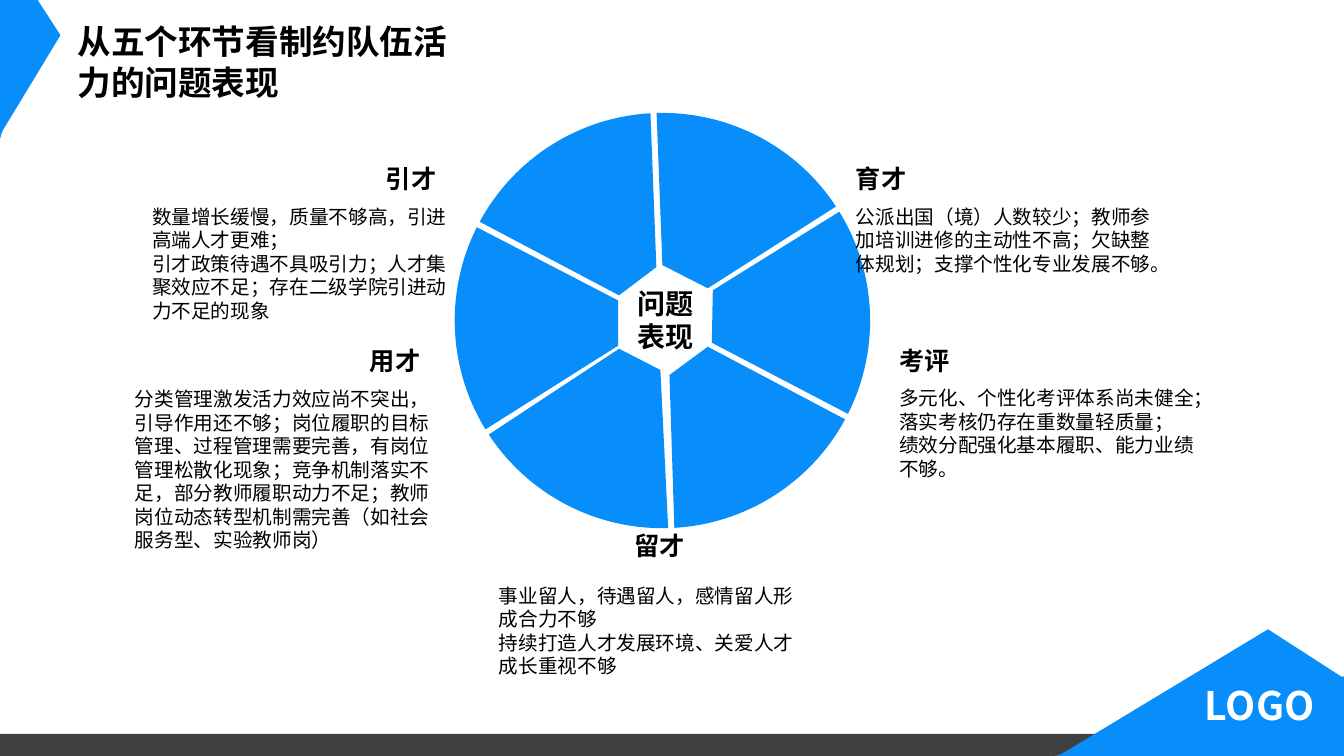
import math
from pptx import Presentation
from pptx import util as u
from pptx.dml.color import RGBColor
from pptx.enum import shapes, text
from pptx.oxml.ns import qn
from lxml import etree

BLUE = RGBColor(0x08, 0x8E, 0xFB)
GREY = RGBColor(0x40, 0x40, 0x40)
BLACK = RGBColor(0, 0, 0)
WHITE = RGBColor(255, 255, 255)
FONT = "Noto Sans CJK SC"

HEADING = {"size": u.Pt(18), "bold": True}
BODY = {"size": u.Pt(14), "bold": False}
TITLE = {"size": u.Pt(24), "bold": True}
HUB = {"size": u.Pt(20), "bold": True}
LOGO = {"size": u.Pt(28), "bold": True}

# Topic: heading position, body position, body height, heading, paragraphs
TOPICS = [
    ((8.39, 1.57), (8.39, 1.98), 0.81, "育才",
     ["公派出国（境）人数较少；教师参加培训进修的主动性不高；欠缺整体规划；支撑个性化专业发展不够。"]),
    ((8.82, 3.38), (8.82, 3.78), 1.04, "考评",
     ["多元化、个性化考评体系尚未健全；",
      "落实考核仍存在重数量轻质量；",
      "绩效分配强化基本履职、能力业绩不够。"]),
    ((3.73, 1.57), (1.41, 1.98), 1.28, "引才",
     ["数量增长缓慢，质量不够高，引进高端人才更难；",
      "引才政策待遇不具吸引力；人才集聚效应不足；存在二级学院引进动力不足的现象"]),
    ((3.57, 3.38), (1.24, 3.79), 1.75, "用才",
     ["分类管理激发活力效应尚不突出，引导作用还不够；岗位履职的目标管理、过程管理需要完善，"
      "有岗位管理松散化现象；竞争机制落实不足，部分教师履职动力不足；"
      "教师岗位动态转型机制需完善（如社会服务型、实验教师岗）"]),
    ((6.19, 5.21), (4.85, 5.74), 1.51, "留才",
     ["事业留人，待遇留人，感情留人形成合力不够",
      "持续打造人才发展环境、关爱人才成长重视不够"]),
]

# Inner corners of each wheel sector, relative to the hub, clockwise from lower right
HUB_CORNERS = [
    [(0.07, 0.54), (0.45, 0.26)],
    [(-0.43, 0.28), (-0.02, 0.49)],
    [(-0.44, -0.2), (-0.44, 0.25)],
    [(-0.06, -0.53), (-0.43, -0.25)],
    [(0.45, -0.32), (0, -0.55)],
    [(0.49, 0.22), (0.5, -0.3)],
]


def paint(sp, color):
    sp.shadow.inherit = False
    sp.fill.solid()
    sp.fill.fore_color.rgb = color
    sp.line.fill.background()


def add_text(s, box, paragraphs, style, color=BLACK):
    tf = s.shapes.add_textbox(*map(u.Inches, box)).text_frame
    tf.word_wrap = True
    tf.auto_size = text.MSO_AUTO_SIZE.SHAPE_TO_FIT_TEXT
    for i, line in enumerate(paragraphs):
        p = tf.paragraphs[0] if i == 0 else tf.add_paragraph()
        r = p.add_run()
        r.text = line
        for name, value in style.items():
            setattr(r.font, name, value)
        r.font.name = FONT
        r.font.color.rgb = color
        ea = etree.SubElement(r.font._element, qn("a:ea"))
        ea.set("typeface", FONT)


def add_triangle(s, box, apex, rotation=0, flip=False):
    sp = s.shapes.add_shape(shapes.MSO_SHAPE.ISOSCELES_TRIANGLE, *map(u.Inches, box))
    sp.adjustments[0] = apex
    sp.rotation = rotation
    if flip:
        sp._element.spPr.xfrm.set("flipH", "1")
    paint(sp, BLUE)


def add_frame(s, width, height):
    """Footer bar and the two folded corners."""
    bar = s.shapes.add_shape(shapes.MSO_SHAPE.RECTANGLE, u.Inches(-0.02),
                             u.Inches(height - 0.22), u.Inches(11.08), u.Inches(0.22))
    paint(bar, GREY)
    add_triangle(s, (width - 2.87, height - 0.79, 2.87, 0.79), 0, flip=True)
    add_triangle(s, (width - 3, height - 1.04, 2.98, 0.68), 0.206, 344.9, flip=True)
    add_triangle(s, (-0.5, 0.5, 1.38, 0.38), 0, 90)
    add_triangle(s, (-0.39, 0.55, 1.44, 0.33), 0.206, 105.1)
    add_text(s, (width - 1.48, height - 0.79, 1.41, 0.57), ["LOGO"], LOGO, WHITE)


def sector_steps(radius, start, sweep, corners):
    """Path commands of one sector, relative to the hub."""
    a, b = math.radians(start), math.radians(start + sweep)
    pull = 4 / 3 * math.tan((b - a) / 4)
    (ax, ay), (bx, by) = [(radius * math.cos(t), radius * math.sin(t)) for t in (a, b)]
    bend = [(ax - pull * ay, ay + pull * ax), (bx + pull * by, by - pull * bx), (bx, by)]
    lines = [("a:lnTo", [corner]) for corner in corners]
    return [("a:moveTo", [(ax, ay)]), ("a:cubicBezTo", bend), *lines, ("a:close", [])]


def add_wheel(s, cx, cy, radius, start=28.4, sweep=58.3):
    """Six curved sectors, 60 degrees apart, around a hexagonal hub."""
    left, top, side = (u.Inches(v) for v in (cx - radius, cy - radius, 2 * radius))
    builder = s.shapes.build_freeform(left, top)
    builder.add_line_segments([(left + side, top), (left + side, top + side), (left, top + side)])
    wheel = builder.convert_to_shape()
    outline = next(wheel._element.iter(qn("a:path")))
    for child in list(outline):
        outline.remove(child)
    for k, corners in enumerate(HUB_CORNERS):
        for tag, points in sector_steps(radius, start + 60 * k, sweep, corners):
            step = etree.SubElement(outline, qn(tag))
            for x, y in points:
                pt = etree.SubElement(step, qn("a:pt"))
                pt.set("x", str(int(u.Inches(x + radius))))
                pt.set("y", str(int(u.Inches(y + radius))))
    paint(wheel, BLUE)
    add_text(s, (cx - 0.35, cy - 0.39, 0.95, 0.77), ["问题表现"], HUB)


def add_topic(s, heading_at, body_at, body_height, heading, paragraphs):
    add_text(s, (*body_at, 3.13, body_height), paragraphs, BODY)
    add_text(s, (*heading_at, 0.97, 0.4), [heading], HEADING)


def main():
    width, height = 13.33, 7.5
    prs = Presentation()
    prs.slide_width, prs.slide_height = u.Inches(width), u.Inches(height)
    s = prs.slides.add_slide(prs.slide_layouts[6])
    add_frame(s, width, height)
    add_text(s, (0.67, 0.16, 4.11, 0.91), ["从五个环节看制约队伍活力的问题表现"], TITLE)
    add_wheel(s, 6.57, 3.18, 2.06)
    for topic in TOPICS:
        add_topic(s, *topic)
    prs.save("out.pptx")


if __name__ == "__main__":
    main()
